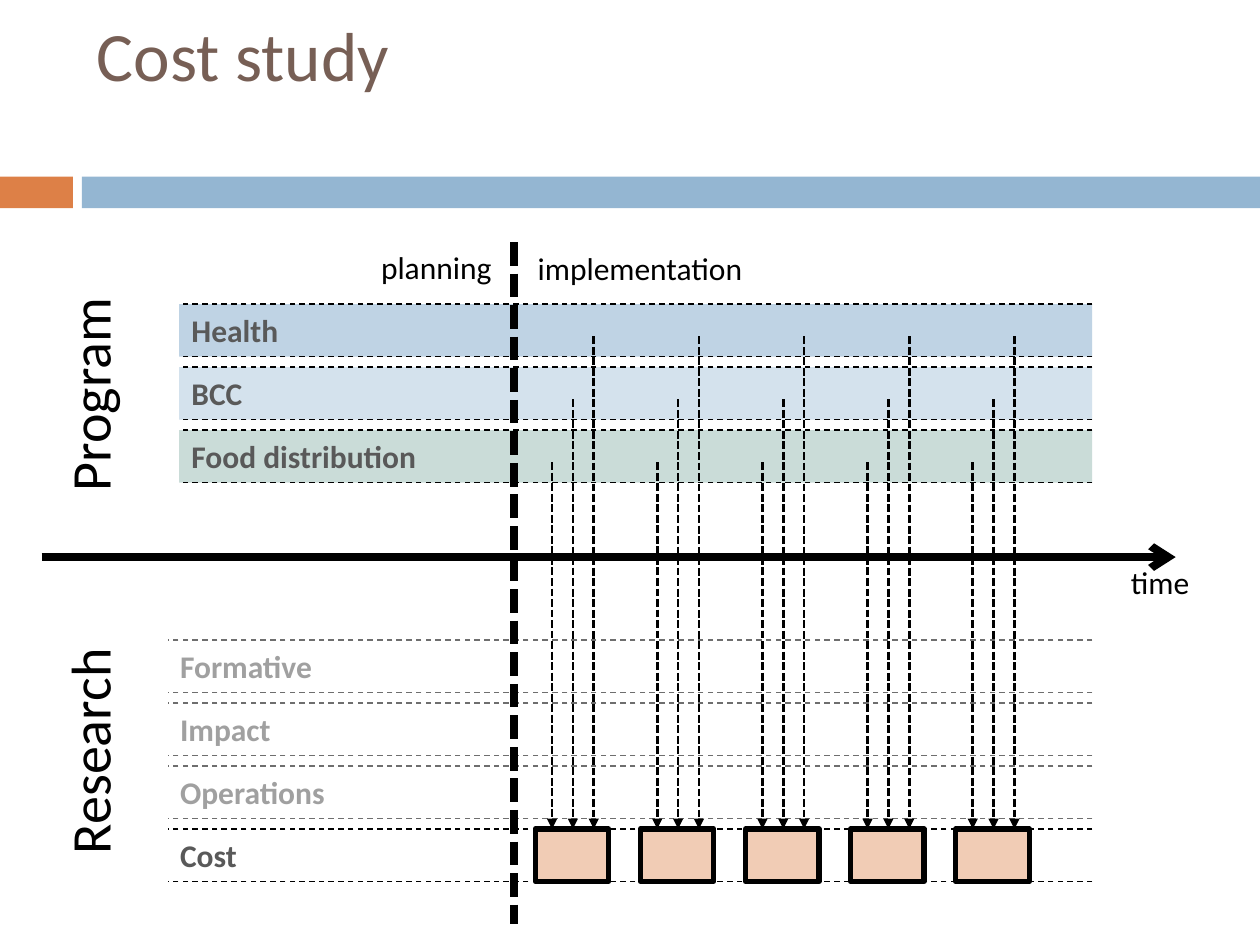
from lxml.etree import SubElement
from pptx import Presentation
from pptx.dml.color import RGBColor
from pptx.enum.dml import MSO_LINE
from pptx.enum.shapes import MSO_CONNECTOR, MSO_SHAPE
from pptx.enum.text import MSO_ANCHOR, MSO_AUTO_SIZE, PP_ALIGN
from pptx.oxml.ns import qn
from pptx.util import Cm, Pt

COLORS = {
    "black": "000000", "white": "FFFFFF", "title": "775F55", "label": "595959",
    "orange": "DD8047", "blue": "94B6D2", "health": "BFD3E4", "bcc": "D4E2ED",
    "food": "CADCD8", "cost": "F1CCB5",
}
FONT = "Calibri"
ROW_STEP, ROW_H, ROW_RIGHT = 1.27, 1.06, 22.02
PROGRAM_LEFT, PROGRAM_TOP = 3.61, 6.13
RESEARCH_LEFT, RESEARCH_TOP = 3.38, 12.9

prs = Presentation()
prs.slide_width, prs.slide_height = Cm(25.4), Cm(19.05)
s = prs.slides.add_slide(prs.slide_layouts[5])


def add_box(x, y, w, h, fill=None, text="", size=18, color="black", bold=False,
            align=PP_ALIGN.LEFT, anchor=MSO_ANCHOR.MIDDLE):
    """Add a filled rectangle, or a text box when there is no fill."""
    at = Cm(x), Cm(y), Cm(w), Cm(h)
    if fill:
        sp = s.shapes.add_shape(MSO_SHAPE.RECTANGLE, *at)
        sp.shadow.inherit = False
        sp.fill.solid()
        sp.fill.fore_color.rgb = RGBColor.from_string(COLORS[fill])
        sp.line.fill.background()
    else:
        sp = s.shapes.add_textbox(*at)
    if text:
        tf = sp.text_frame
        tf.word_wrap = True
        tf.vertical_anchor = anchor
        p = tf.paragraphs[0]
        p.alignment = align
        r = p.add_run()
        r.text = text
        r.font.name, r.font.size, r.font.bold = FONT, Pt(size), bold
        r.font.color.rgb = RGBColor.from_string(COLORS[color])
    return sp


def add_line(x1, y1, x2, y2, width, dash=None, arrow=None):
    """Add a black line; arrow names the arrowhead at its end."""
    c = s.shapes.add_connector(MSO_CONNECTOR.STRAIGHT, Cm(x1), Cm(y1), Cm(x2), Cm(y2))
    c.line.width = Pt(width)
    c.line.color.rgb = RGBColor.from_string(COLORS["black"])
    if dash:
        c.line.dash_style = dash
    if arrow:
        SubElement(c.line._get_or_add_ln(), qn("a:tailEnd"), type=arrow)
    SubElement(c._element.spPr, qn("a:effectLst"))


# Title and its band
title = s.shapes.title
title.left, title.top, title.width, title.height = Cm(1.7), Cm(0.64), Cm(22.66), Cm(2.74)
tf = title.text_frame
tf.auto_size = MSO_AUTO_SIZE.NONE
tf.vertical_anchor = MSO_ANCHOR.MIDDLE
p = tf.paragraphs[0]
p.alignment = PP_ALIGN.LEFT
r = p.add_run()
r.text = "Cost study"
r.font.name, r.font.size = FONT, Pt(39.6)
r.font.color.rgb = RGBColor.from_string(COLORS["title"])
p.add_line_break()
add_box(0, 3.56, 1.47, 0.64, "orange")
add_box(1.65, 3.56, 23.75, 0.64, "blue")

# Program rows
programs = [("Health", "health"), ("BCC", "bcc"), ("Food distribution", "food")]
for i, (name, fill) in enumerate(programs):
    y = PROGRAM_TOP + i * ROW_STEP
    add_box(PROGRAM_LEFT, y, ROW_RIGHT - PROGRAM_LEFT, ROW_H, fill, name,
            color="label", bold=True)
    for edge in (y, y + ROW_H):
        add_line(ROW_RIGHT, edge, PROGRAM_LEFT, edge, 0.79, MSO_LINE.DASH)

# Time axis and captions
add_line(0.84, 11.23, 23.7, 11.23, 4.5, arrow="arrow")
for name, y in (("Program", 7.14), ("Research", 14.33)):
    sp = add_box(-1.07, y, 5.72, 1.63, text=name, size=32,
                 align=PP_ALIGN.CENTER, anchor=MSO_ANCHOR.TOP)
    sp.rotation = 270
for name, x, y, w, align in (
    ("planning", 6.55, 4.88, 3.61, PP_ALIGN.RIGHT),
    ("implementation", 10.59, 4.9, 6.15, PP_ALIGN.LEFT),
    ("time", 22.43, 11.23, 1.91, PP_ALIGN.CENTER),
):
    add_box(x, y, w, 1.02, text=name, align=align, anchor=MSO_ANCHOR.TOP)

# Research rows
for i, name in enumerate(("Formative", "Impact", "Operations", "Cost")):
    y = RESEARCH_TOP + i * ROW_STEP
    add_box(RESEARCH_LEFT, y, 4.88, ROW_H, text=name, color="label", bold=True)
    for edge in (y, y + ROW_H):
        add_line(ROW_RIGHT, edge, RESEARCH_LEFT, edge, 0.79, MSO_LINE.DASH)

# Veil that fades the rows above Cost
veil = add_box(2.74, 12.37, 20.96, 4.24, "white")
veil.line.color.rgb = RGBColor.from_string(COLORS["white"])
veil.line.width = Pt(1.5)
SubElement(veil._element.spPr.find(".//" + qn("a:srgbClr")), qn("a:alpha"), val="43000")

# Start of implementation
add_line(10.36, 4.88, 10.36, 18.62, 4.5, MSO_LINE.SQUARE_DOT)

# Cost rounds, each fed by the three programs
cost_top = RESEARCH_TOP + 3 * ROW_STEP
for i in range(5):
    x = 10.79 + i * 2.12
    box = add_box(x, cost_top, 1.48, ROW_H, "cost")
    box.line.color.rgb = RGBColor.from_string(COLORS["black"])
    box.line.width = Pt(3)
    for row in range(3):
        arrow_x = x + 1.18 - row * 0.42
        row_middle = PROGRAM_TOP + row * ROW_STEP + 0.65
        add_line(arrow_x, row_middle, arrow_x, cost_top, 1.5, MSO_LINE.SQUARE_DOT, "triangle")

prs.save("out.pptx")
